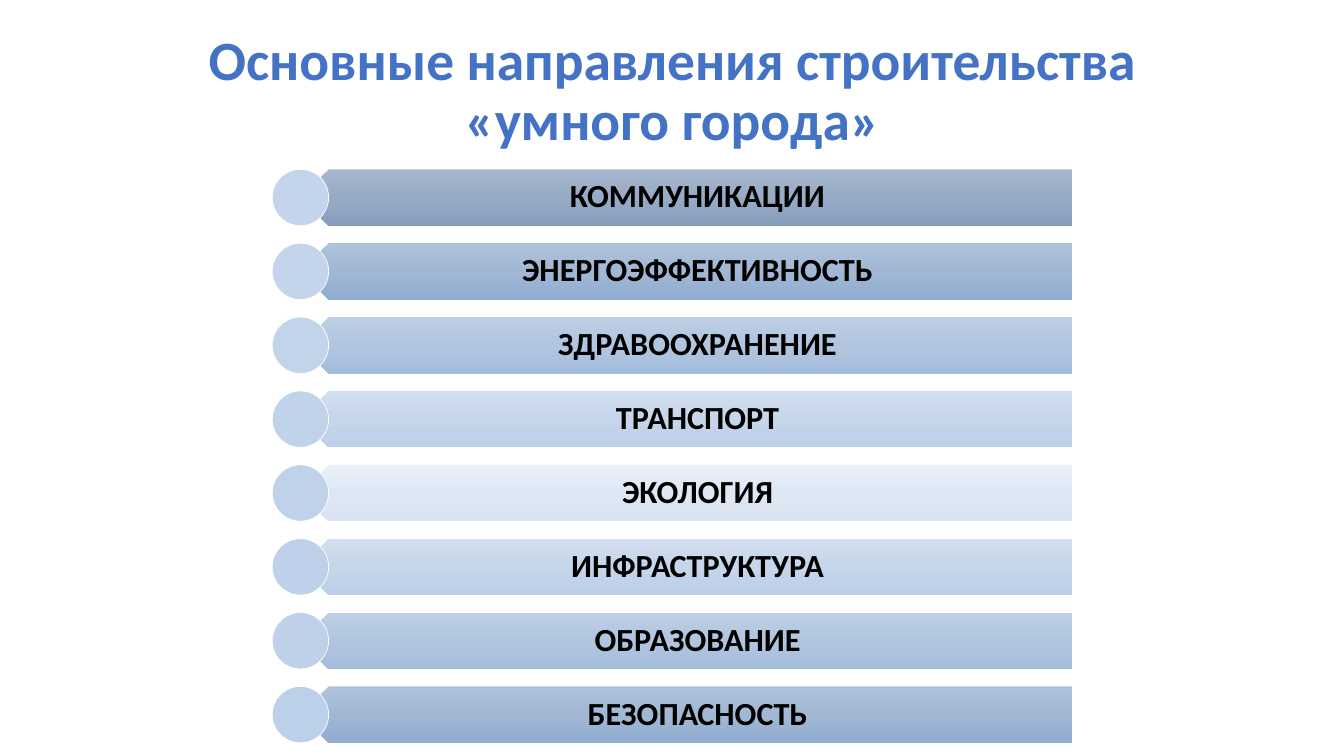
from lxml import etree
from pptx import Presentation, util as u
from pptx.dml.color import RGBColor
from pptx.enum import shapes, text
from pptx.oxml import ns

FONT = "Calibri"
BLUE = RGBColor(0x44, 0x72, 0xC4)
BLACK = RGBColor(0, 0, 0)
WHITE = RGBColor(0xFF, 0xFF, 0xFF)
CIRCLE_FIRST = RGBColor(0xC4, 0xD5, 0xEB)
CIRCLE_LAST = RGBColor(0xBD, 0xD0, 0xE9)

# Bar gradients, from top to bottom, darkest first
SHADES = [
    [RGBColor(0xA5, 0xB6, 0xCE), RGBColor(0x98, 0xAB, 0xC4), RGBColor(0x86, 0x9E, 0xBE)],
    [RGBColor(0xAE, 0xC2, 0xDB), RGBColor(0xA1, 0xB7, 0xD4), RGBColor(0x90, 0xAD, 0xD1)],
    [RGBColor(0xBE, 0xCF, 0xE5), RGBColor(0xB1, 0xC5, 0xDF), RGBColor(0xA4, 0xBD, 0xDD)],
    [RGBColor(0xD2, 0xDF, 0xEF), RGBColor(0xC5, 0xD5, 0xEA), RGBColor(0xBD, 0xD0, 0xE8)],
    [RGBColor(0xEB, 0xF0, 0xF8), RGBColor(0xDE, 0xE7, 0xF4), RGBColor(0xD9, 0xE4, 0xF3)],
]
BAR_SHADES = SHADES + SHADES[3:0:-1]

DIRECTIONS = ["КОММУНИКАЦИИ", "ЭНЕРГОЭФФЕКТИВНОСТЬ", "ЗДРАВООХРАНЕНИЕ", "ТРАНСПОРТ",
              "ЭКОЛОГИЯ", "ИНФРАСТРУКТУРА", "ОБРАЗОВАНИЕ", "БЕЗОПАСНОСТЬ"]
FIRST_TOP, LAST_TOP, ROW_HEIGHT = 1.68, 6.81, 0.56


def add_solid(parent, color):
    fill = etree.SubElement(parent, ns.qn("a:solidFill"))
    etree.SubElement(fill, ns.qn("a:srgbClr"), val=str(color))


class CitySlide:
    def __init__(self, slide):
        self.shapes = slide.shapes

    def label(self, wording, place, size, color, insets):
        box = self.shapes.add_textbox(*map(u.Inches, place))
        frame = box.text_frame
        frame.word_wrap = True
        frame.vertical_anchor = text.MSO_ANCHOR.MIDDLE
        (frame.margin_left, frame.margin_top,
         frame.margin_right, frame.margin_bottom) = map(u.Inches, insets)
        para = frame.paragraphs[0]
        para.alignment = text.PP_ALIGN.CENTER
        para.line_spacing = 0.9
        span = para.add_run()
        span.text = wording
        span.font.name, span.font.size, span.font.bold = FONT, u.Pt(size), True
        span.font.color.rgb = color
        return span

    def title(self, wording):
        span = self.label(wording, (0.92, 0.4, 11.5, 1.04), 39.6, BLUE,
                          (0.15, 0.05, 0.15, 0.05))
        # Thin white outline around the letters
        outline = etree.Element(ns.qn("a:ln"), w=str(u.Pt(0.75)))
        add_solid(outline, WHITE)
        span.font._element.insert(0, outline)

    def shape(self, kind, place):
        shape = self.shapes.add_shape(kind, *map(u.Inches, place))
        shape.shadow.inherit = False
        return shape

    def bar(self, top, shades):
        bar = self.shape(shapes.MSO_SHAPE.PENTAGON, (2.98, top, 7.65, ROW_HEIGHT))
        bar.rotation = 180
        bar.line.fill.background()
        bar.fill.gradient()
        # Three stops that keep their direction when the bar is turned
        gradient = bar._element.spPr.find(ns.qn("a:gradFill"))
        gradient.set("rotWithShape", "0")
        gradient.find(ns.qn("a:lin")).set("ang", "5400000")
        stops = gradient.find(ns.qn("a:gsLst"))
        for stop in list(stops):
            stops.remove(stop)
        for index, color in enumerate(shades):
            stop = etree.SubElement(stops, ns.qn("a:gs"), pos=str(index * 50000))
            etree.SubElement(stop, ns.qn("a:srgbClr"), val=str(color))

    def circle(self, top, color):
        circle = self.shape(shapes.MSO_SHAPE.OVAL, (2.7, top, ROW_HEIGHT, ROW_HEIGHT))
        circle.fill.solid()
        circle.fill.fore_color.rgb = color
        circle.line.color.rgb = WHITE
        circle.line.width = u.Pt(0.5)


def main():
    deck = Presentation()
    deck.slide_width, deck.slide_height = u.Inches(13.33), u.Inches(7.5)
    page = CitySlide(deck.slides.add_slide(deck.slide_layouts[6]))

    page.title("Основные направления строительства «умного города»")

    # One row for each direction: bar, wording, circle
    for row, (wording, shades) in enumerate(zip(DIRECTIONS, BAR_SHADES)):
        share = row / (len(DIRECTIONS) - 1)
        top = FIRST_TOP + share * (LAST_TOP - FIRST_TOP)
        page.bar(top, shades)
        page.label(wording, (3.13, top, 7.51, ROW_HEIGHT), 23, BLACK,
                   (0.25, 0.1, 0.18, 0.1))
        page.circle(top, RGBColor(*(round(first + share * (last - first))
                                    for first, last in zip(CIRCLE_FIRST, CIRCLE_LAST))))

    deck.save("out.pptx")


if __name__ == "__main__":
    main()
